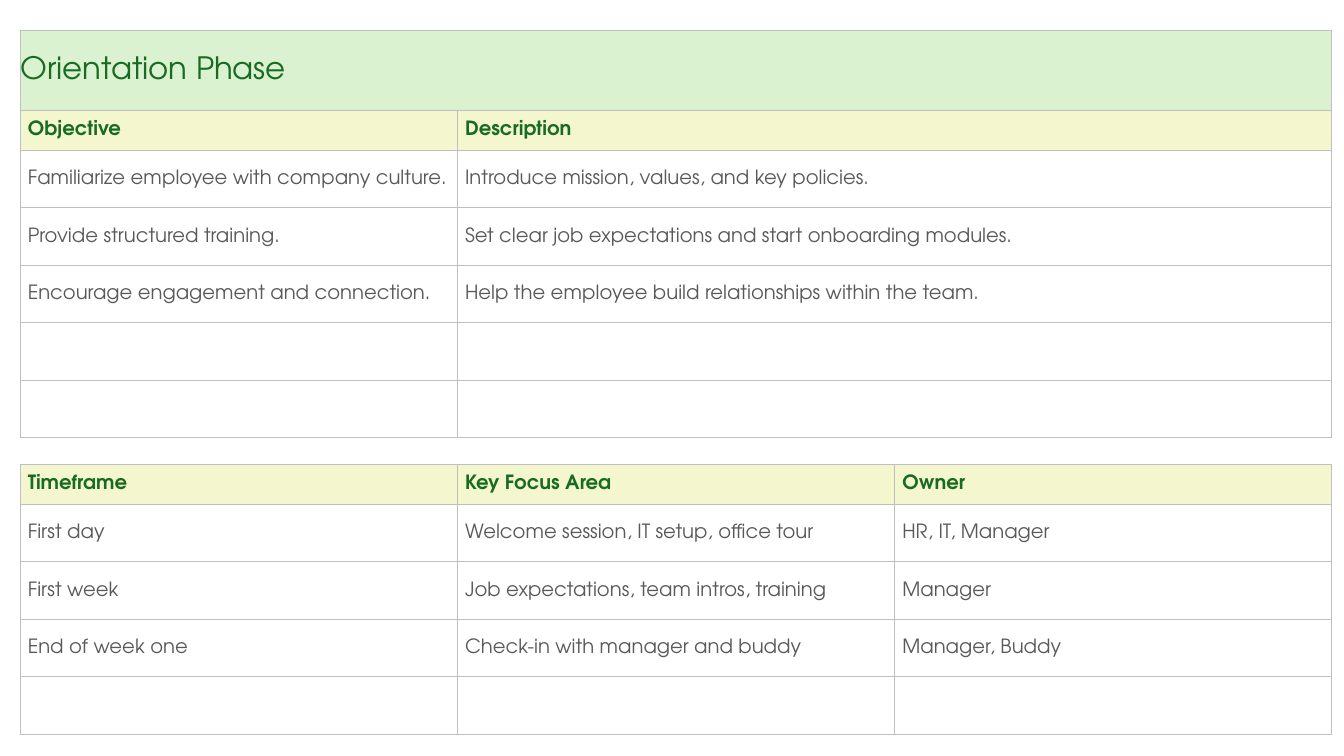
from dataclasses import dataclass

from lxml.etree import SubElement
from pptx import Presentation
from pptx.dml.color import RGBColor
from pptx.enum.text import MSO_ANCHOR
from pptx.oxml.ns import qn
from pptx.table import Table, _Cell
from pptx.util import Cm, Length, Pt

FONT = "TeX Gyre Adventor"
GREEN = RGBColor(0x19, 0x6B, 0x24)
GRAY = RGBColor(0x59, 0x59, 0x59)
BORDER = RGBColor(0xBF, 0xBF, 0xBF)
MINT = RGBColor(0xDA, 0xF2, 0xD0)
CREAM = RGBColor(0xF4, 0xF7, 0xCD)
WHITE = RGBColor(0xFF, 0xFF, 0xFF)

COLUMN_COUNT = 3
COLUMN_WIDTH = Cm(11.02)


@dataclass(frozen=True)
class RowStyle:
    height: Length
    fill: RGBColor
    color: RGBColor
    size: int = 14
    bold: bool = False
    indent: Length = Cm(0.2)
    side_borders: bool = True


@dataclass(frozen=True)
class PlanRow:
    style: RowStyle
    texts: tuple[str, ...]


BANNER = RowStyle(Cm(2.02), MINT, GREEN, size=22, indent=Cm(0.02))
HEADING = RowStyle(Cm(1), CREAM, GREEN, bold=True)
ENTRY = RowStyle(Cm(1.45), WHITE, GRAY)
GAP = RowStyle(Cm(0.67), WHITE, GRAY, size=8, side_borders=False)

PLAN = (
    PlanRow(BANNER, ("Orientation Phase",)),
    PlanRow(HEADING, ("Objective", "Description")),
    PlanRow(ENTRY, ("Familiarize employee with company culture.",
                    "Introduce mission, values, and key policies.")),
    PlanRow(ENTRY, ("Provide structured training.",
                    "Set clear job expectations and start onboarding modules.")),
    PlanRow(ENTRY, ("Encourage engagement and connection.",
                    "Help the employee build relationships within the team.")),
    PlanRow(ENTRY, ("", "")),
    PlanRow(ENTRY, ("", "")),
    PlanRow(GAP, ("", "", "")),
    PlanRow(HEADING, ("Timeframe", "Key Focus Area", "Owner")),
    PlanRow(ENTRY, ("First day", "Welcome session, IT setup, office tour", "HR, IT, Manager")),
    PlanRow(ENTRY, ("First week", "Job expectations, team intros, training", "Manager")),
    PlanRow(ENTRY, ("End of week one", "Check-in with manager and buddy", "Manager, Buddy")),
    PlanRow(ENTRY, ("", "", "")),
)


def draw_borders(cell: _Cell, side_borders: bool) -> None:
    properties = cell._tc.get_or_add_tcPr()
    for edge in ("lnL", "lnR", "lnT", "lnB"):
        line = SubElement(properties, qn(f"a:{edge}"), w=str(Pt(0.5)))
        if side_borders or edge in ("lnT", "lnB"):
            solid = SubElement(line, qn("a:solidFill"))
            SubElement(solid, qn("a:srgbClr"), val=str(BORDER))
        else:
            SubElement(line, qn("a:noFill"))


def format_cell(cell: _Cell, style: RowStyle) -> None:
    draw_borders(cell, style.side_borders)
    cell.fill.solid()
    cell.fill.fore_color.rgb = style.fill
    cell.vertical_anchor = MSO_ANCHOR.MIDDLE
    cell.margin_left = style.indent
    cell.margin_right = cell.margin_top = Cm(0.02)
    cell.margin_bottom = Cm(0)


def write_text(cell: _Cell, text: str, style: RowStyle) -> None:
    cell.text_frame.text = text
    paragraph = cell.text_frame.paragraphs[0]
    for run in paragraph.runs:
        run.font.name = FONT
        run.font.size = Pt(style.size)
        run.font.bold = style.bold
        run.font.color.rgb = style.color
    if not text:
        SubElement(paragraph._p, qn("a:endParaRPr"), sz=str(style.size * 100))


def fill_row(table: Table, index: int, row: PlanRow) -> None:
    table.rows[index].height = row.style.height
    for column in range(COLUMN_COUNT):
        format_cell(table.cell(index, column), row.style)
    last = len(row.texts) - 1
    if last < COLUMN_COUNT - 1:
        table.cell(index, last).merge(table.cell(index, COLUMN_COUNT - 1))
    for column, text in enumerate(row.texts):
        write_text(table.cell(index, column), text, row.style)


def main() -> None:
    presentation = Presentation()
    presentation.slide_width = Cm(33.87)
    presentation.slide_height = Cm(19.05)
    slide = presentation.slides.add_slide(presentation.slide_layouts.get_by_name("Blank"))

    plan_height = sum(row.style.height for row in PLAN)
    plan_table = slide.shapes.add_table(
        len(PLAN), COLUMN_COUNT, Cm(0.5), Cm(0.76), COLUMN_WIDTH * COLUMN_COUNT, plan_height
    ).table
    plan_table.first_row = False
    plan_table.horz_banding = False
    for column in plan_table.columns:
        column.width = COLUMN_WIDTH
    for index, row in enumerate(PLAN):
        fill_row(plan_table, index, row)

    presentation.save("out.pptx")


if __name__ == "__main__":
    main()
